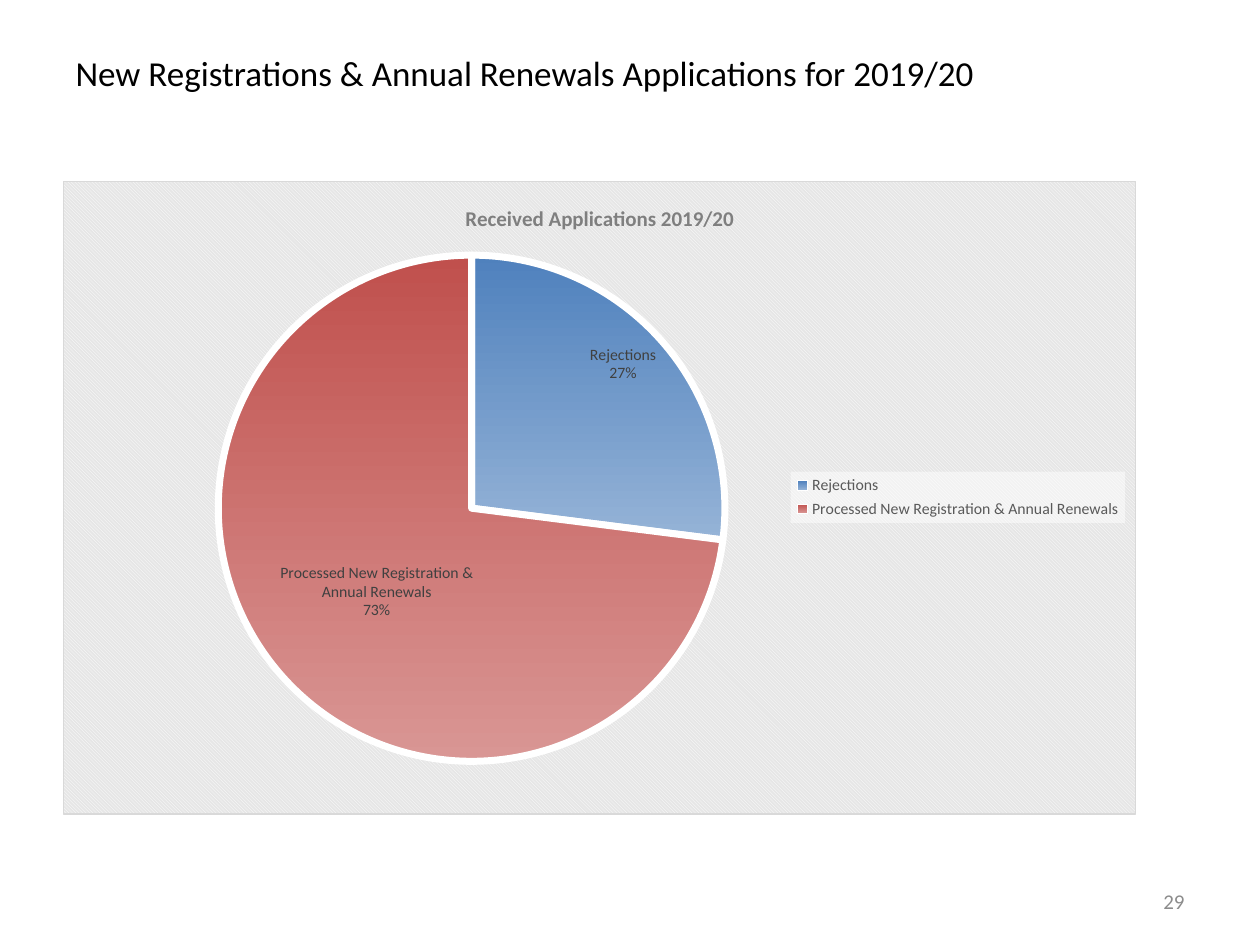
from dataclasses import dataclass

from lxml.etree import _Element as Element
from pptx import Presentation
from pptx.chart.chart import Chart
from pptx.chart.data import CategoryChartData
from pptx.dml.color import RGBColor
from pptx.enum.chart import XL_CHART_TYPE as ChartType
from pptx.enum.chart import XL_LABEL_POSITION as LabelPosition
from pptx.enum.chart import XL_LEGEND_POSITION as LegendPosition
from pptx.enum.text import MSO_ANCHOR as Anchor
from pptx.enum.text import PP_ALIGN as Align
from pptx.oxml import parse_xml
from pptx.oxml.ns import nsdecls, qn
from pptx.util import Emu, Inches, Pt

WIDTH, HEIGHT = Inches(10), Inches(7.5)
FONT = "Calibri"


@dataclass(frozen=True)
class Area:
    """A rectangle in shares of its container."""

    left: float
    top: float
    width: float
    height: float

    def on_slide(self) -> tuple[Emu, Emu, Emu, Emu]:
        """Return the rectangle in slide lengths."""
        return (Emu(int(self.left * WIDTH)), Emu(int(self.top * HEIGHT)),
                Emu(int(self.width * WIDTH)), Emu(int(self.height * HEIGHT)))


@dataclass(frozen=True)
class Slice:
    """One slice of the pie with its gradient and label position."""

    name: str
    value: int
    gradient: tuple[str, str]
    position: LabelPosition


TITLE_AREA = Area(0.05, 0.04, 0.9, 0.073)
CHART_AREA = Area(0.05, 0.191, 0.852, 0.671)
NUMBER_AREA = Area(0.717, 0.927, 0.233, 0.053)
PIE_AREA = Area(0.144, 0.117, 0.473, 0.8)
LEGEND_AREA = Area(0.678, 0.459, 0.312, 0.081)
SLICES = (
    Slice("Rejections", 27, ("4F81BD", "95B3D7"), LabelPosition.INSIDE_END),
    Slice("Processed New Registration & Annual Renewals", 73,
          ("C0504D", "D99694"), LabelPosition.CENTER),
)


def color(value: str) -> RGBColor:
    """Turn a hex string into a colour."""
    return RGBColor.from_string(value)


def style(font, size: float, value: str, bold: bool = False) -> None:
    """Set the face, size, colour and weight of a font."""
    font.name, font.size, font.bold = FONT, Pt(size), bold
    font.color.rgb = color(value)


def write(shape, text: str, size: float, value: str, align: Align) -> None:
    """Write one paragraph, centred vertically, in a shape."""
    frame = shape.text_frame
    frame.word_wrap = True
    frame.vertical_anchor = Anchor.MIDDLE
    para = frame.paragraphs[0]
    para.text, para.alignment = text, align
    style(para.font, size, value)


def place(parent: Element, index: int, area: Area, inner: bool = False) -> None:
    """Give a chart part a manual layout."""
    for layout in parent.findall(qn("c:layout")):
        parent.remove(layout)
    target = '<c:layoutTarget val="inner"/>' if inner else ""
    sizes = (("x", area.left), ("y", area.top), ("w", area.width), ("h", area.height))
    modes = '<c:xMode val="edge"/><c:yMode val="edge"/>'
    values = "".join(f'<c:{key} val="{share}"/>' for key, share in sizes)
    parent.insert(index, parse_xml(
        f'<c:layout {nsdecls("c")}><c:manualLayout>{target}{modes}{values}'
        "</c:manualLayout></c:layout>"))


def fill_after(element: Element, content: str) -> None:
    """Add shape properties right after a chart element."""
    element.addnext(parse_xml(f'<c:spPr {nsdecls("c", "a")}>{content}</c:spPr>'))


def draw_slices(chart: Chart) -> None:
    """Colour the slices and label them with category and percentage."""
    series = chart.plots[0].series[0]
    labels = series.data_labels
    labels.show_category_name = labels.show_percentage = True
    labels.show_value = False
    labels.number_format, labels.number_format_is_linked = "0%", False
    style(labels.font, 9, "404040")
    for index, item in enumerate(SLICES):
        point = series.points[index]
        fill = point.format.fill
        fill.gradient()
        fill.gradient_angle = 270
        for stop, value in zip(fill.gradient_stops, item.gradient):
            stop.color.rgb = color(value)
        point.format.line.color.rgb = color("FFFFFF")
        point.format.line.width = Pt(4)
        style(point.data_label.font, 9, "404040")
        point.data_label.position = item.position
    flags = {"showVal": "0", "showCatName": "1", "showPercent": "1"}
    for label in chart.element.iter(qn("c:dLbl")):
        for flag, value in flags.items():
            label.find(qn(f"c:{flag}")).set("val", value)
    for last in list(chart.element.iter(qn("c:showBubbleSize"))):
        last.addnext(parse_xml(f'<c:separator {nsdecls("c")}>\n</c:separator>'))


def draw_chart(slide) -> None:
    """Add the pie chart with its title, legend and patterned background."""
    data = CategoryChartData()
    data.categories = [item.name for item in SLICES]
    data.add_series("Series 1", [item.value for item in SLICES])
    chart = slide.shapes.add_chart(ChartType.PIE, *CHART_AREA.on_slide(), data).chart
    style(chart.font, 10, "000000")
    chart.plots[0].vary_by_categories = True
    chart.has_title = True
    heading = chart.chart_title.text_frame.paragraphs[0]
    heading.text = "Received Applications 2019/20"
    style(heading.font, 12, "7F7F7F", bold=True)
    draw_slices(chart)

    chart.has_legend = True
    chart.legend.position = LegendPosition.RIGHT
    chart.legend.include_in_layout = False
    style(chart.legend.font, 9, "595959")
    root = chart.element
    legend = next(root.iter(qn("c:legend")))
    place(legend, 1, LEGEND_AREA)
    fill_after(legend.find(qn("c:overlay")),
               '<a:solidFill><a:srgbClr val="FFFFFF"><a:alpha val="50000"/>'
               "</a:srgbClr></a:solidFill>")
    place(next(root.iter(qn("c:plotArea"))), 0, PIE_AREA, inner=True)
    fill_after(root.find(qn("c:chart")),
               '<a:pattFill prst="dkDnDiag"><a:fgClr><a:srgbClr val="FFFFFF"/></a:fgClr>'
               '<a:bgClr><a:srgbClr val="E6E6E6"/></a:bgClr></a:pattFill>'
               f'<a:ln w="{Pt(0.75)}"><a:solidFill><a:srgbClr val="D9D9D9"/>'
               "</a:solidFill></a:ln>")


def main() -> None:
    """Build the slide and save the deck."""
    deck = Presentation()
    deck.slide_width, deck.slide_height = WIDTH, HEIGHT
    slide = deck.slides.add_slide(deck.slide_layouts[5])
    title = slide.shapes.title
    title.left, title.top, title.width, title.height = TITLE_AREA.on_slide()
    write(title, "New Registrations & Annual Renewals Applications for 2019/20",
          20, "000000", Align.LEFT)
    draw_chart(slide)
    number = slide.shapes.add_textbox(*NUMBER_AREA.on_slide())
    write(number, "29", 12, "8C8C8C", Align.RIGHT)
    deck.save("out.pptx")


if __name__ == "__main__":
    main()
